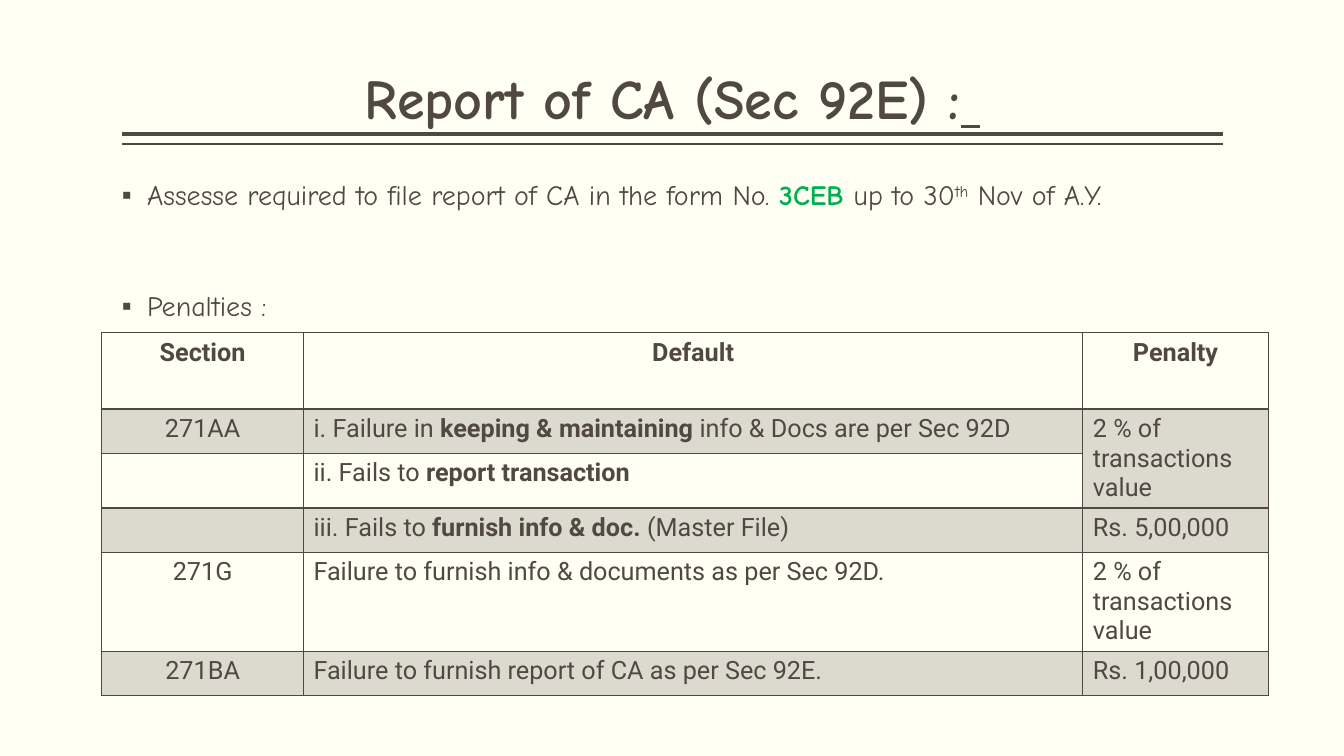
from lxml import etree
from pptx import Presentation
from pptx import util as u
from pptx.dml.color import RGBColor
from pptx.enum import shapes, text
from pptx.oxml import ns

INK = "514843"
PAPER = "FFFFF3"
GREEN = "00B050"
HEADING_FONT = "Comic Neue"
TABLE_FONT = "Roboto"


def paint(target, colour):
    target.rgb = RGBColor.from_string(colour)


def add_xml(parent, tag, **attributes):
    return etree.SubElement(parent, ns.qn(tag), attributes)


class ReportSlide:
    """Holds the style and the current slide, with a method for each element."""

    def __init__(self, deck):
        self.slide = deck.slides.add_slide(deck.slide_layouts[1])
        background = self.slide.background.fill
        background.solid()
        paint(background.fore_color, PAPER)

    def style(self, paragraph, name, size, bold=False):
        font = paragraph.font
        font.name, font.size, font.bold = name, u.Pt(size), bold
        paint(font.color, INK)

    def rule(self, top, weight):
        line = self.slide.shapes.add_connector(
            shapes.MSO_CONNECTOR.STRAIGHT,
            u.Inches(1.21), u.Inches(top), u.Inches(12.13), u.Inches(top))
        paint(line.line.color, INK)
        line.line.width = u.Pt(weight)
        add_xml(line._element.spPr, "a:effectLst")

    def place(self, holder, top, height, anchor):
        holder.left, holder.top = u.Inches(1.21), u.Inches(top)
        holder.width, holder.height = u.Inches(10.92), u.Inches(height)
        frame = holder.text_frame
        frame.word_wrap = True
        frame.auto_size = text.MSO_AUTO_SIZE.NONE
        frame.vertical_anchor = anchor
        frame.margin_left = frame.margin_right = 0
        frame.margin_top = frame.margin_bottom = u.Inches(0.05)
        return frame

    def title(self, wording):
        frame = self.place(self.slide.shapes.title, 0.16, 1.2, text.MSO_ANCHOR.BOTTOM)
        heading = frame.paragraphs[0]
        heading.alignment = text.PP_ALIGN.CENTER
        heading.line_spacing = 0.9
        self.style(heading, HEADING_FONT, 40, True)
        heading.add_run().text = wording
        tail = heading.add_run()
        tail.text = " "
        tail.font.underline = True

    def bullets(self, items):
        frame = self.place(self.slide.placeholders[1], 1.75, 5, text.MSO_ANCHOR.TOP)
        for index, (gap, runs) in enumerate(items):
            point = frame.paragraphs[0] if index == 0 else frame.add_paragraph()
            point.line_spacing = 0.9
            point.space_before = u.Pt(gap)
            properties = point._p.get_or_add_pPr()
            properties.set("marL", str(u.Inches(0.25)))
            properties.set("indent", str(-u.Inches(0.25)))
            add_xml(properties, "a:buFont", typeface="Arial")
            add_xml(properties, "a:buChar", char="▪")
            self.style(point, HEADING_FONT, 20)
            for wording, kind in runs:
                run = point.add_run()
                run.text = wording
                if kind == "form":
                    run.font.bold = True
                    paint(run.font.color, GREEN)
                elif kind == "super":
                    run._r.get_or_add_rPr().set("baseline", "30000")

    def borders(self, cell, header):
        properties = cell._tc.get_or_add_tcPr()
        for position, side in enumerate(("lnL", "lnR", "lnT", "lnB")):
            weight = 2 if header and side == "lnB" else 1
            edge = etree.Element(ns.qn("a:" + side), w=str(u.Pt(weight)))
            add_xml(add_xml(edge, "a:solidFill"), "a:srgbClr", val=INK)
            properties.insert(position, edge)

    def cell(self, cell, wording, header, shaded, centred):
        if shaded:
            cell.fill.solid()
            paint(cell.fill.fore_color, INK)
            colour = cell._tc.tcPr.find(".//" + ns.qn("a:srgbClr"))
            add_xml(colour, "a:alpha", val="20000")
        else:
            cell.fill.background()
        self.borders(cell, header)
        paragraph = cell.text_frame.paragraphs[0]
        paragraph.alignment = text.PP_ALIGN.CENTER if centred else text.PP_ALIGN.LEFT
        self.style(paragraph, TABLE_FONT, 18, header)
        for index, part in enumerate(wording.split("**")):
            if part:
                run = paragraph.add_run()
                run.text = part
                if index % 2:
                    run.font.bold = True

    def table(self, rows, widths, heights):
        table = self.slide.shapes.add_table(
            len(rows), len(widths), u.Inches(1.01), u.Inches(3.3),
            u.Inches(sum(widths)), u.Inches(sum(heights))).table
        table.first_row = table.horz_banding = False
        for column, width in zip(table.columns, widths):
            column.width = u.Inches(width)
        for r, (row, height) in enumerate(zip(rows, heights)):
            table.rows[r].height = u.Inches(height)
            for c, wording in enumerate(row):
                self.cell(table.cell(r, c), wording, header=r == 0,
                          shaded=r % 2 == 1, centred=r == 0 or c == 0)
        return table


def main():
    deck = Presentation()
    deck.slide_width, deck.slide_height = u.Inches(13.33), u.Inches(7.5)
    report = ReportSlide(deck)
    report.rule(1.33, 3)
    report.rule(1.43, 1)
    report.title("Report of CA (Sec 92E) :")
    report.bullets([
        (0, [("Assesse required to file report of CA in the form No. ", "plain"),
             ("3CEB ", "form"), ("up to 30", "plain"), ("th", "super"),
             (" Nov of A.Y.", "plain")]),
        (57.5, [("Penalties :", "plain")]),
    ])
    penalties = report.table([
        ("Section", "Default", "Penalty"),
        ("271AA", "i. Failure in **keeping & maintaining** info & Docs are per Sec 92D",
         "2 % of transactions value"),
        ("", "ii. Fails to **report transaction**", ""),
        ("", "iii. Fails to **furnish info & doc.** (Master File)", "Rs. 5,00,000"),
        ("271G", "Failure to furnish info & documents as per Sec 92D.",
         "2 % of transactions value"),
        ("271BA", "Failure to furnish report of CA as per Sec 92E.", "Rs. 1,00,000"),
    ], widths=[2, 7.73, 1.84], heights=[0.76] + [0.44] * 5)
    penalties.cell(1, 2).merge(penalties.cell(2, 2))
    deck.save("out.pptx")


if __name__ == "__main__":
    main()
